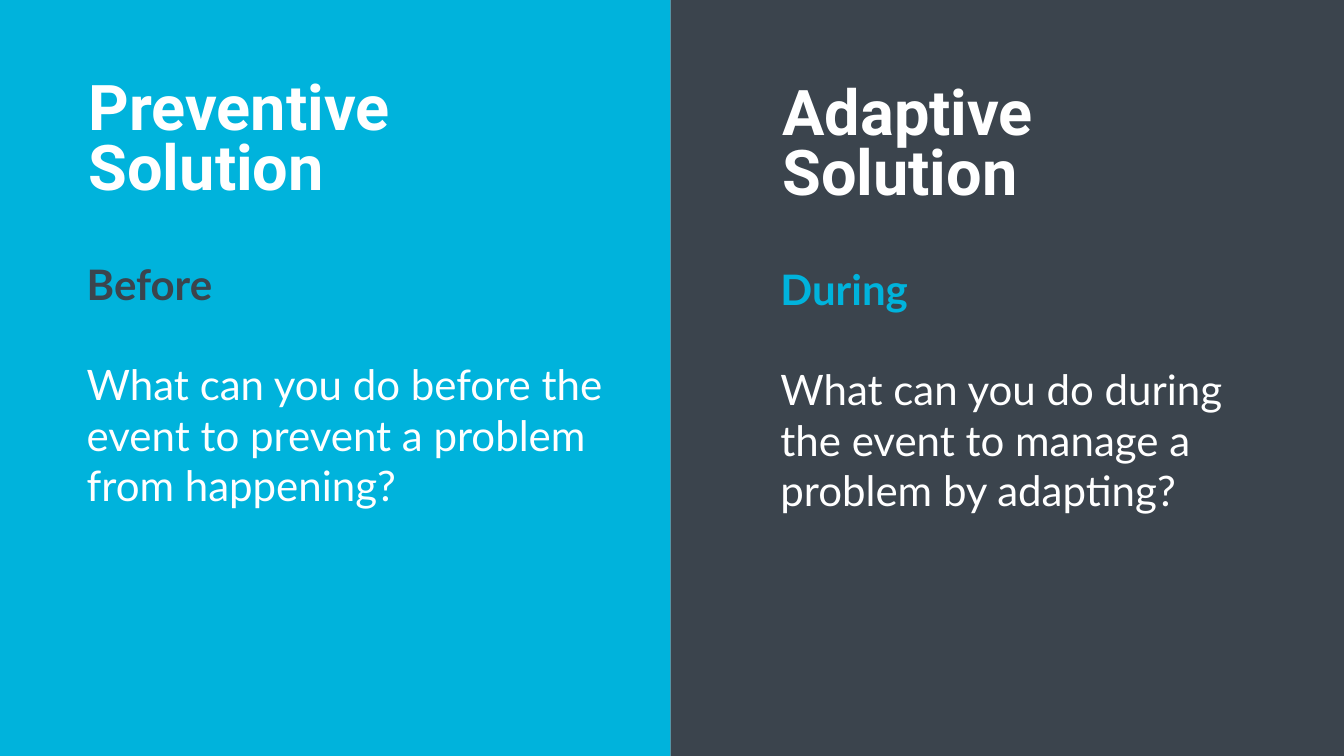
from dataclasses import dataclass

from pptx import Presentation
from pptx.dml.color import RGBColor
from pptx.enum import shapes, text
from pptx.slide import Slide
from pptx.util import Inches, Pt


@dataclass(frozen=True)
class Theme:
    blue: str = "00B3DC"
    slate: str = "3B444D"
    white: str = "FFFFFF"
    title_font: str = "Roboto"
    body_font: str = "Lato"
    title_size: int = 45
    body_size: int = 30
    label_gap: int = 36


@dataclass(frozen=True)
class Panel:
    left: float
    width: float
    fill: str
    accent: str
    text_left: float
    title_top: float
    body_width: float
    title: list[str]
    label: str
    question: list[str]


THEME = Theme()
PANEL_TOP, PANEL_HEIGHT = -0.05, 7.55
TITLE_WIDTH, TITLE_HEIGHT = 3.53, 1.3
BODY_OFFSET, BODY_HEIGHT = 1.77, 2.57

PANELS = [
    Panel(6.65, 6.69, THEME.slate, THEME.blue, 7.69, 0.82, 4.78,
          ["Adaptive", "Solution"], "During",
          ["What can you do during the event to manage a problem by adapting?"]),
    Panel(0, 6.65, THEME.blue, THEME.slate, 0.81, 0.77, 5.62,
          ["Preventive Solution"], "Before",
          ["What can you do before the event to prevent a problem",
           "from happening?"]),
]


def add_background(slide: Slide, panel: Panel) -> None:
    shape = slide.shapes.add_shape(
        shapes.MSO_SHAPE.RECTANGLE, Inches(panel.left), Inches(PANEL_TOP),
        Inches(panel.width), Inches(PANEL_HEIGHT))
    shape.shadow.inherit = False
    shape.fill.solid()
    shape.fill.fore_color.rgb = RGBColor.from_string(panel.fill)
    shape.line.fill.background()


def add_frame(slide: Slide, left: float, top: float, width: float, height: float,
              inset_x: float, inset_y: float) -> text.MSO_ANCHOR:
    box = slide.shapes.add_textbox(
        Inches(left), Inches(top), Inches(width), Inches(height))
    frame = box.text_frame
    frame.word_wrap = True
    frame.auto_size = text.MSO_AUTO_SIZE.SHAPE_TO_FIT_TEXT
    frame.margin_left = frame.margin_right = Inches(inset_x)
    frame.margin_top = frame.margin_bottom = Inches(inset_y)
    return frame


def write(paragraph, content: str, *, font: str, size: int, color: str,
          bold: bool = False, line_spacing: float = 1.0, space_after: int = 0) -> None:
    paragraph.line_spacing = line_spacing
    paragraph.space_after = Pt(space_after)
    run = paragraph.add_run()
    run.text = content
    run.font.name = font
    run.font.size = Pt(size)
    run.font.bold = bold
    run.font.color.rgb = RGBColor.from_string(color)


def add_title(slide: Slide, panel: Panel) -> None:
    frame = add_frame(slide, panel.text_left, panel.title_top,
                      TITLE_WIDTH, TITLE_HEIGHT, 0.07, 0.04)
    for index, line in enumerate(panel.title):
        paragraph = frame.add_paragraph() if index else frame.paragraphs[0]
        write(paragraph, line, font=THEME.title_font, size=THEME.title_size,
              color=THEME.white, bold=True, line_spacing=0.8)


def add_body(slide: Slide, panel: Panel) -> None:
    frame = add_frame(slide, panel.text_left, panel.title_top + BODY_OFFSET,
                      panel.body_width, BODY_HEIGHT, 0.05, 0.02)
    write(frame.paragraphs[0], panel.label, font=THEME.body_font,
          size=THEME.body_size, color=panel.accent, bold=True,
          space_after=THEME.label_gap)
    for line in panel.question:
        write(frame.add_paragraph(), line, font=THEME.body_font,
              size=THEME.body_size, color=THEME.white)


def main() -> None:
    presentation = Presentation()
    presentation.slide_width = Inches(13.33)
    presentation.slide_height = Inches(7.5)
    slide = presentation.slides.add_slide(presentation.slide_layouts[6])
    for panel in PANELS:
        add_background(slide, panel)
        add_body(slide, panel)
        add_title(slide, panel)
    presentation.save("out.pptx")


if __name__ == "__main__":
    main()
